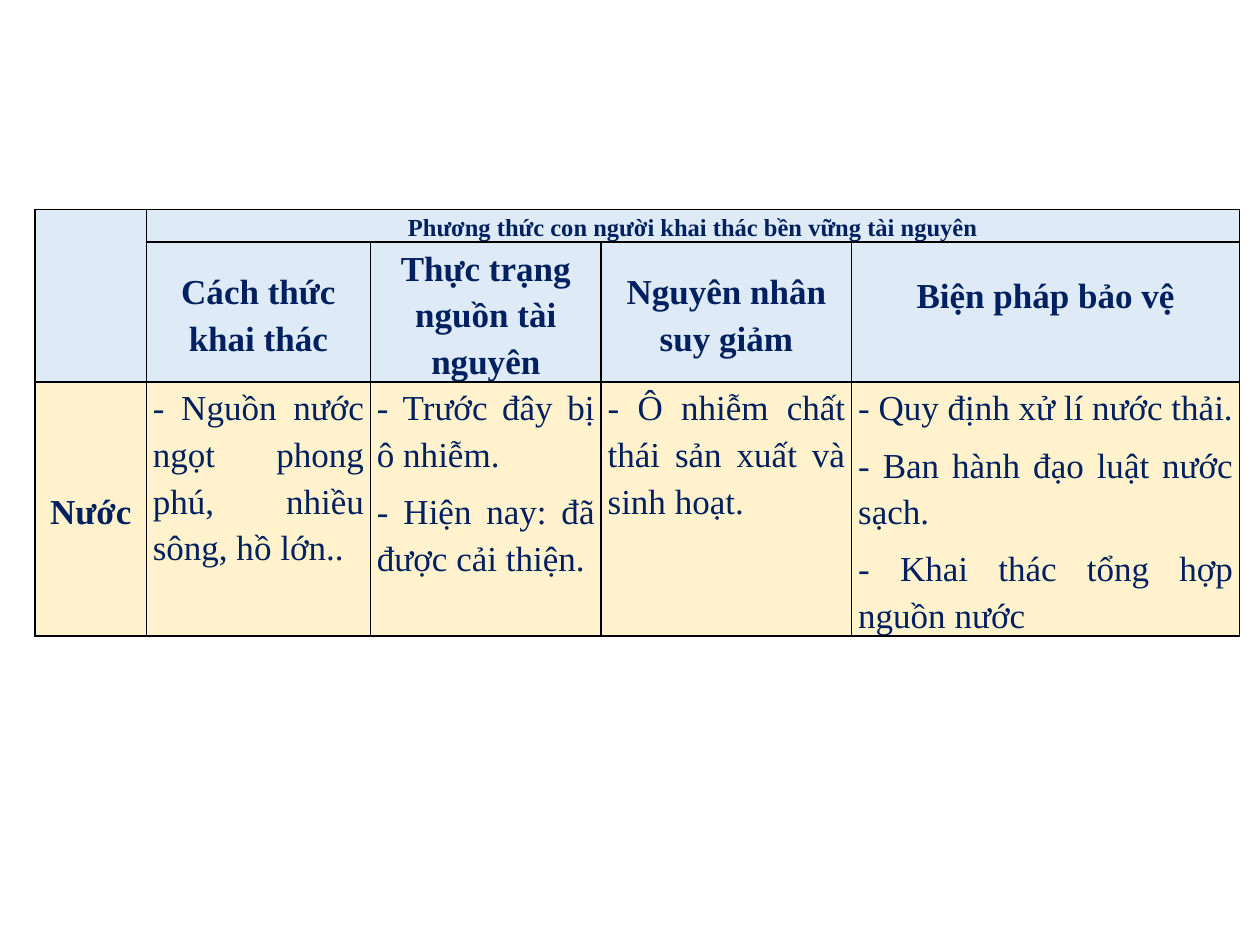
from dataclasses import dataclass

from lxml.etree import SubElement
from pptx import Presentation
from pptx.dml.color import RGBColor
from pptx.enum.text import MSO_ANCHOR, PP_ALIGN
from pptx.oxml.ns import qn
from pptx.util import Cm, Pt


@dataclass(frozen=True)
class Theme:
    font: str = "Times New Roman"
    ink: str = "002060"
    header: str = "DEEAF6"
    body: str = "FFF2CC"
    border: str = "000000"
    border_width: int = Pt(1)
    title_size: int = Pt(14)
    text_size: int = Pt(20)


THEME = Theme()
COLUMN_WIDTHS = (2.24, 4.52, 4.65, 5.05, 7.82)
ROW_HEIGHTS = (0.66, 2.81, 5.12)
TITLE = "Phương thức con người khai thác bền vững tài nguyên"
HEADINGS = (
    "Cách thức khai thác",
    "Thực trạng nguồn tài nguyên",
    "Nguyên nhân suy giảm",
    "Biện pháp bảo vệ",
)
RESOURCE = "Nước"
DETAILS = (
    ("- Nguồn nước ngọt phong phú, nhiều sông, hồ lớn..",),
    ("- Trước đây bị ô nhiễm.", "- Hiện nay: đã được cải thiện."),
    ("- Ô nhiễm chất thái sản xuất và sinh hoạt.",),
    (
        "- Quy định xử lí nước thải.",
        "- Ban hành đạo luật nước sạch.",
        "- Khai thác tổng hợp nguồn nước",
    ),
)


def add_table(slide):
    rows, cols = len(ROW_HEIGHTS), len(COLUMN_WIDTHS)
    width, height = Cm(sum(COLUMN_WIDTHS)), Cm(sum(ROW_HEIGHTS))
    table = slide.shapes.add_table(rows, cols, Cm(0.71), Cm(4.22), width, height).table
    for column, size in zip(table.columns, COLUMN_WIDTHS):
        column.width = Cm(size)
    for row, size in zip(table.rows, ROW_HEIGHTS):
        row.height = Cm(size)
    return table


def set_borders(cell):
    tc_pr = cell._tc.get_or_add_tcPr()
    for i, side in enumerate(("a:lnL", "a:lnR", "a:lnT", "a:lnB")):
        line = SubElement(tc_pr, qn(side), w=str(THEME.border_width))
        fill = SubElement(line, qn("a:solidFill"))
        SubElement(fill, qn("a:srgbClr"), val=THEME.border)
        tc_pr.insert(i, line)


def style_cell(cell, color):
    cell.fill.solid()
    cell.fill.fore_color.rgb = RGBColor.from_string(color)
    cell.margin_left = cell.margin_right = Cm(0.13)
    cell.margin_top = cell.margin_bottom = 0
    cell.text_frame.paragraphs[0].font.size = THEME.title_size
    set_borders(cell)


def write_cell(cell, lines, size=THEME.text_size, bold=True,
               align=PP_ALIGN.CENTER, anchor=MSO_ANCHOR.MIDDLE):
    tf = cell.text_frame
    tf.text = "\n".join(lines)
    cell.vertical_anchor = anchor
    for p in tf.paragraphs:
        p.alignment = align
        p.line_spacing = 1.2
        p.space_before = Pt(6)
        p.font.name = THEME.font
        p.font.size = size
        p.font.bold = bold
        p.font.color.rgb = RGBColor.from_string(THEME.ink)


def fill_table(table):
    for r, row in enumerate(table.rows):
        for cell in row.cells:
            style_cell(cell, THEME.body if r == 2 else THEME.header)
    table.cell(0, 0).merge(table.cell(1, 0))
    table.cell(0, 1).merge(table.cell(0, 4))
    write_cell(table.cell(0, 1), [TITLE], size=THEME.title_size, anchor=MSO_ANCHOR.TOP)
    write_cell(table.cell(2, 0), [RESOURCE])
    for c, (heading, lines) in enumerate(zip(HEADINGS, DETAILS), start=1):
        write_cell(table.cell(1, c), [heading])
        write_cell(table.cell(2, c), lines, bold=False,
                   align=PP_ALIGN.JUSTIFY, anchor=MSO_ANCHOR.TOP)
    table.cell(1, 4).margin_bottom = Cm(0.76)


def main():
    prs = Presentation()
    prs.slide_width, prs.slide_height = Cm(25.4), Cm(19.05)
    slide = prs.slides.add_slide(prs.slide_layouts[6])
    fill_table(add_table(slide))
    prs.save("out.pptx")


if __name__ == "__main__":
    main()
